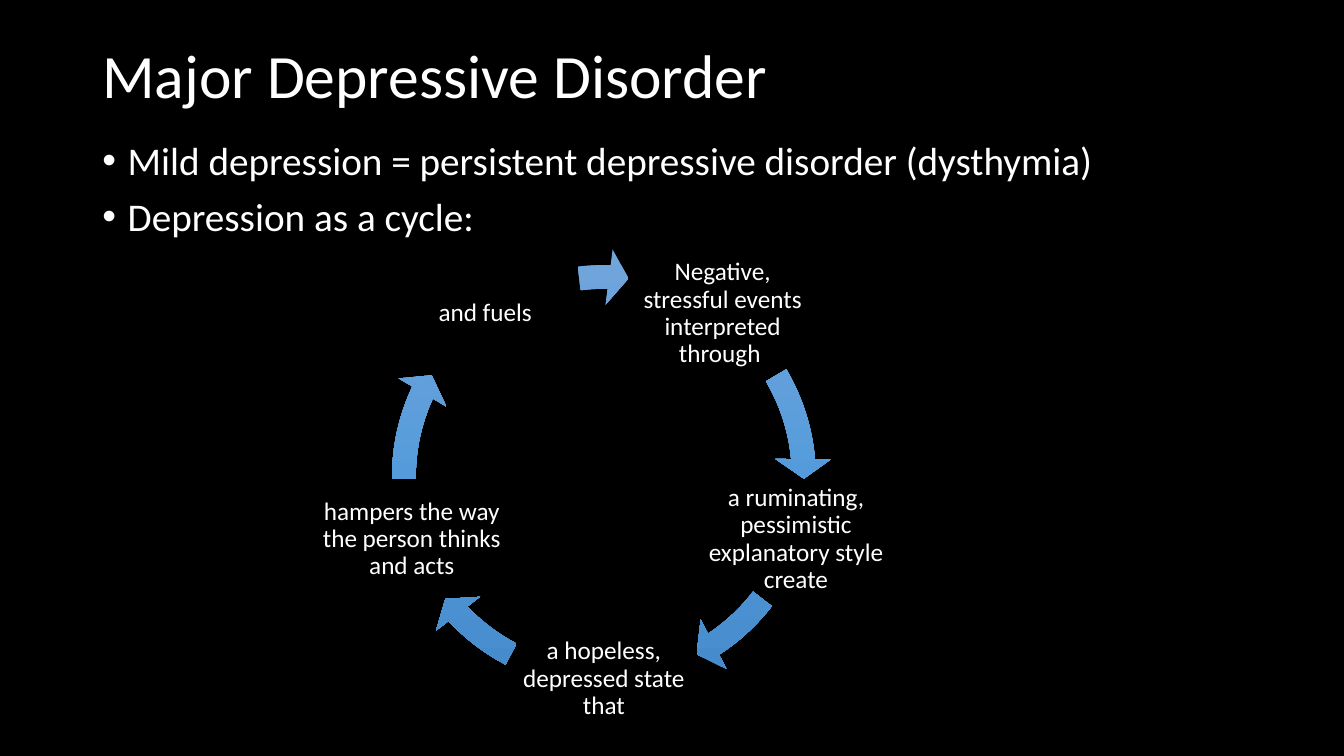
from copy import deepcopy
from dataclasses import dataclass
from math import cos, radians, sin

from pptx import Presentation
from pptx.dml.color import RGBColor
from pptx.enum import shapes, text
from pptx.oxml import ns
from pptx.util import Cm, Pt


@dataclass(frozen=True)
class Theme:
    font: str = "Calibri"
    background: str = "000000"
    text: str = "FFFFFF"
    arrow: tuple = ((0, "71A6DB"), (0.5, "559BDB"), (1, "448ACA"))
    title_size: int = 44
    body_size: int = 28
    step_size: int = 18


THEME = Theme()

# Cycle geometry, in centimetres
CENTRE_X, CENTRE_Y = 15.22, 12.02
RADIUS, RING = 5.09, 11.48
STEP_W, STEP_H = 4.72, 3.07

# Each step's text, then the start and end angle of the arrow that leaves it
CYCLE = [
    ("Negative, stressful events interpreted through ", 329.44, 354.89),
    ("a ruminating, pessimistic explanatory style create", 37.56, 56.75),
    ("a hopeless, depressed state that", 117.65, 136.84),
    ("hampers the way the person thinks and acts", 179.52, 204.96),
    ("and fuels", 262.9, 271.51),
]


def add_bullet(p):
    pPr = p._p.get_or_add_pPr()
    pPr.set("marL", str(Cm(0.64)))
    pPr.set("indent", str(-Cm(0.64)))
    font = pPr.makeelement(ns.qn("a:buFont"), {"typeface": "Arial"})
    char = pPr.makeelement(ns.qn("a:buChar"), {"char": "•"})
    pPr.extend([font, char])


def add_text(parent, lines, x, y, w, h, *, size, align=text.PP_ALIGN.LEFT,
             anchor=text.MSO_ANCHOR.MIDDLE, margins=(0.25, 0.13),
             before=0, bullets=False):
    """Add a text box with one paragraph per line; lengths in centimetres."""
    tf = parent.add_textbox(Cm(x), Cm(y), Cm(w), Cm(h)).text_frame
    tf.word_wrap = True
    tf.vertical_anchor = anchor
    tf.margin_left = tf.margin_right = Cm(margins[0])
    tf.margin_top = tf.margin_bottom = Cm(margins[1])
    for i, line in enumerate(lines):
        p = tf.add_paragraph() if i else tf.paragraphs[0]
        p.alignment = align
        p.line_spacing = 0.9
        p.space_before = Pt(before)
        if bullets:
            add_bullet(p)
        r = p.add_run()
        r.text = line
        r.font.name = THEME.font
        r.font.size = Pt(size)
        r.font.color.rgb = RGBColor.from_string(THEME.text)


def fill_gradient(shape, stops):
    """Fill a shape from top to bottom with (position, colour) stops."""
    shape.fill.gradient()
    shape.fill.gradient_angle = 270
    gs_list = shape._element.spPr.find(ns.qn("a:gradFill")).find(ns.qn("a:gsLst"))
    while len(gs_list) < len(stops):
        gs_list.append(deepcopy(gs_list[0]))
    for stop, (position, colour) in zip(shape.fill.gradient_stops, stops):
        stop.position = position
        stop.color.rgb = RGBColor.from_string(colour)


def add_cycle_arrow(parent, start, end):
    """Add an arrow on the ring, from start to end degrees clockwise."""
    sp = parent.add_shape(
        shapes.MSO_SHAPE.CIRCULAR_ARROW,
        Cm(CENTRE_X - RING / 2), Cm(CENTRE_Y - RING / 2), Cm(RING), Cm(RING))
    sp.shadow.inherit = False
    sp.line.fill.background()
    fill_gradient(sp, THEME.arrow)
    # An adjustment of 0.6 is one degree
    values = (0.052, 5.6 * 0.6, end * 0.6, start * 0.6, 0.061)
    for i, value in enumerate(values):
        sp.adjustments[i] = value


def add_cycle(s):
    group = s.shapes.add_group_shape().shapes
    for i, (step, start, end) in enumerate(CYCLE):
        angle = radians(-54 + i * 360 / len(CYCLE))
        x = CENTRE_X + RADIUS * cos(angle) - STEP_W / 2
        y = CENTRE_Y + RADIUS * sin(angle) - STEP_H / 2
        add_text(group, [step], x, y, STEP_W, STEP_H, size=THEME.step_size,
                 align=text.PP_ALIGN.CENTER, margins=(0.08, 0.08))
        add_cycle_arrow(group, start, end)


def main():
    prs = Presentation()
    prs.slide_width, prs.slide_height = Cm(33.87), Cm(19.05)
    s = prs.slides.add_slide(prs.slide_layouts[6])
    s.background.fill.solid()
    s.background.fill.fore_color.rgb = RGBColor.from_string(THEME.background)

    add_text(s.shapes, ["Major Depressive Disorder"], 2.33, 0.13, 29.21, 3.68,
             size=THEME.title_size)
    add_text(s.shapes,
             ["Mild depression = persistent depressive disorder (dysthymia)",
              "Depression as a cycle:"],
             2.33, 3.43, 29.21, 13.72, size=THEME.body_size,
             anchor=text.MSO_ANCHOR.TOP, before=10, bullets=True)
    add_cycle(s)
    prs.save("out.pptx")


if __name__ == "__main__":
    main()
